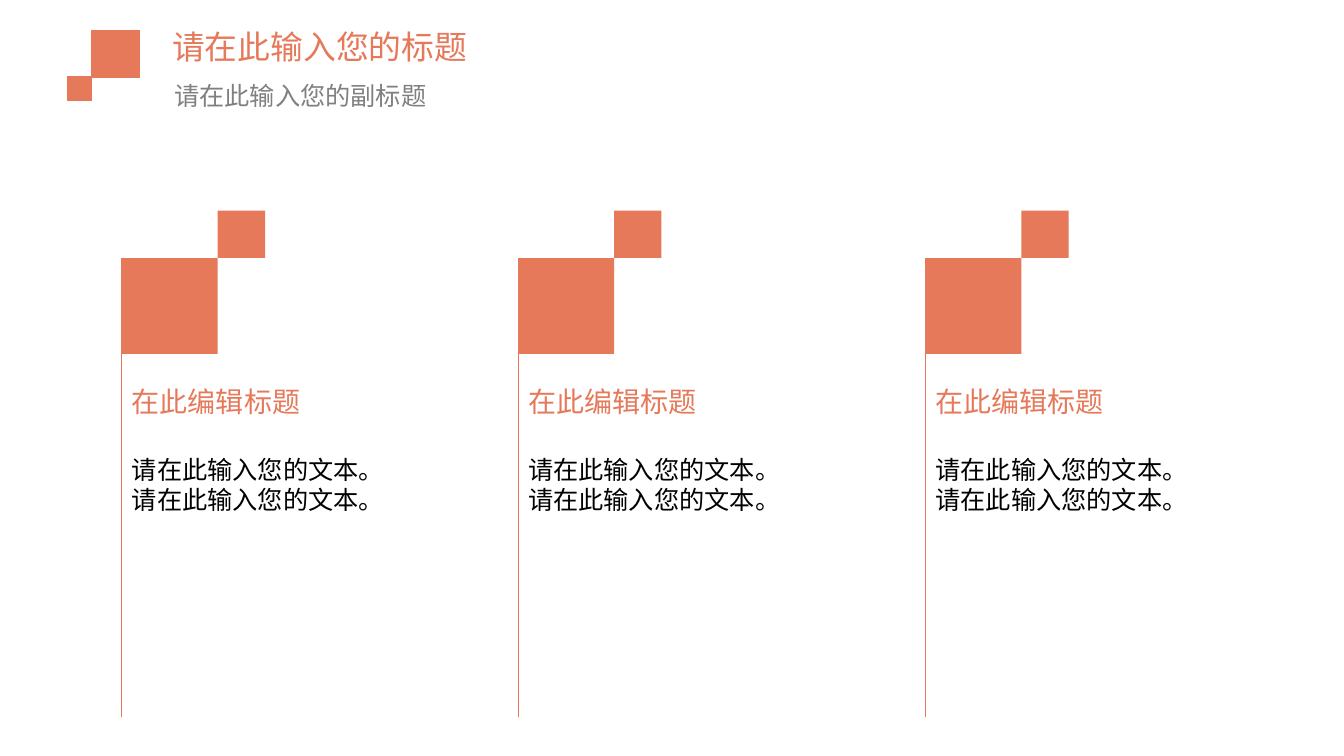
from pptx import Presentation
from pptx.dml.color import RGBColor
from pptx.enum.shapes import MSO_CONNECTOR, MSO_SHAPE
from pptx.enum.text import MSO_ANCHOR
from pptx.oxml.ns import qn
from pptx.util import Inches, Pt

RECTANGLE = MSO_SHAPE.RECTANGLE
STRAIGHT = MSO_CONNECTOR.STRAIGHT
TOP, MIDDLE = MSO_ANCHOR.TOP, MSO_ANCHOR.MIDDLE

CORAL = RGBColor(0xE6, 0x79, 0x5A)
GRAY = RGBColor(0x80, 0x80, 0x80)
BLACK = RGBColor(0x00, 0x00, 0x00)

COLUMN_LEFTS = (1.21, 5.14, 9.18)
COLUMN_WIDTH = 2.94
FLAG_TOP = 2.56
LARGE, SMALL = 0.95, 0.47
HEADING_TOP, BODY_TOP, COLUMN_BOTTOM = 3.51, 4.46, 7.11

TITLE = {"size": Pt(23.4), "name": "Arial"}
SUBTITLE = {"size": Pt(18), "name": "Arial"}
HEADING = {"size": Pt(20), "name": "Arial"}
BODY = {"size": Pt(18), "name": "Arial"}


def add_square(page, left, top, side, outlined=False):
    square = page.shapes.add_shape(
        RECTANGLE, Inches(left), Inches(top), Inches(side), Inches(side))
    square.shadow.inherit = False
    square.fill.solid()
    square.fill.fore_color.rgb = CORAL
    if outlined:
        square.line.color.rgb = CORAL
        square.line.width = Pt(0.75)
    else:
        square.line.fill.background()


def add_text(page, area, text, font_format, color, anchor=TOP, spacing=None):
    box = page.shapes.add_textbox(*map(Inches, area))
    frame = box.text_frame
    frame.word_wrap = True
    frame.vertical_anchor = anchor
    para = frame.paragraphs[0]
    para.line_spacing = spacing
    span = para.add_run()
    span.text = text
    for attribute, value in font_format.items():
        setattr(span.font, attribute, value)
    span.font.color.rgb = color


def add_pole(page, left):
    pole = page.shapes.add_connector(
        STRAIGHT, Inches(left), Inches(FLAG_TOP), Inches(left), Inches(COLUMN_BOTTOM))
    pole.line.color.rgb = CORAL
    pole.line.width = Pt(0.75)
    properties = pole.line._get_or_add_ln().getparent()
    properties.append(properties.makeelement(qn("a:effectLst"), {}))


def add_header(page):
    add_square(page, 0.91, 0.3, 0.47, outlined=True)
    add_square(page, 0.67, 0.76, 0.24, outlined=True)
    add_text(page, (1.61, 0.14, 9.56, 0.64), "请在此输入您的标题", TITLE, CORAL, MIDDLE)
    add_text(page, (1.63, 0.78, 9.54, 0.54), "请在此输入您的副标题",
             SUBTITLE, GRAY, spacing=0.9)


def add_column(page, left):
    add_text(page, (left, HEADING_TOP, COLUMN_WIDTH, BODY_TOP - HEADING_TOP),
             "在此编辑标题", HEADING, CORAL, MIDDLE)
    add_text(page, (left, BODY_TOP, COLUMN_WIDTH, COLUMN_BOTTOM - BODY_TOP),
             "请在此输入您的文本。请在此输入您的文本。", BODY, BLACK)
    add_pole(page, left)
    add_square(page, left, FLAG_TOP, LARGE)
    add_square(page, left + LARGE, FLAG_TOP - SMALL, SMALL)


def main():
    deck = Presentation()
    deck.slide_width = Inches(13.33)
    deck.slide_height = Inches(7.5)
    page = deck.slides.add_slide(deck.slide_layouts[6])
    add_header(page)
    for left in COLUMN_LEFTS:
        add_column(page, left)
    deck.save("out.pptx")


if __name__ == "__main__":
    main()
